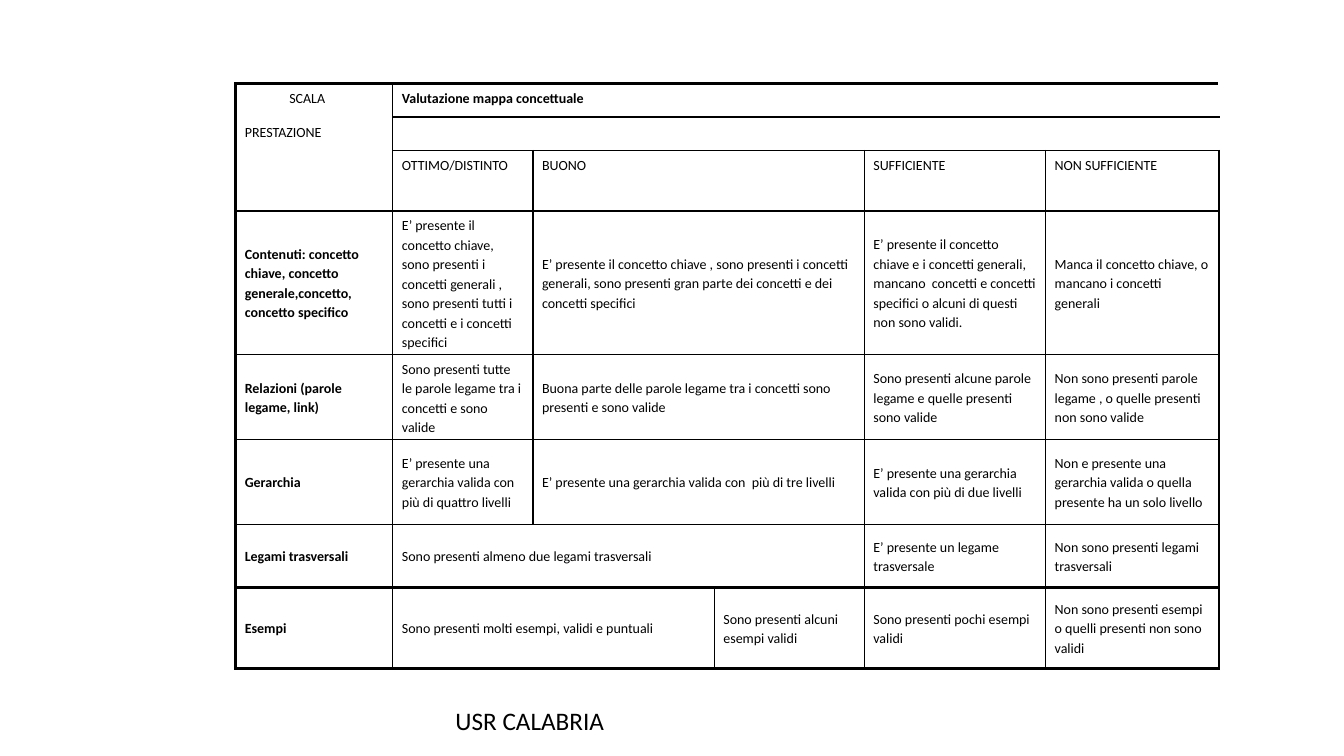
import dataclasses

import lxml.etree
import pptx
import pptx.dml.color
import pptx.enum.text
import pptx.oxml.ns
import pptx.util

Cm = pptx.util.Cm
Pt = pptx.util.Pt
ANCHOR = pptx.enum.text.MSO_ANCHOR


@dataclasses.dataclass(frozen=True)
class Theme:
    """Colours, type sizes and line widths of the slide."""
    font: str = "Calibri"
    ink: str = "000000"
    table_size: int = 10
    footer_size: int = 18
    thin: float = 1
    thick: float = 2.25


THEME = Theme()
COLUMN_WIDTHS = [3.96, 3.53, 4.57, 3.78, 4.57, 4.37]
ROW_HEIGHTS = [0.84, 0.84, 1.07, 3.58, 2.13, 2.13, 1.6, 2.03]
HEADER_ROWS = 3
LABEL_ROW = 2
EXAMPLES_ROW = 7

RUBRIC = [
    [("SCALA\nPRESTAZIONE", 3, 1), ("Valutazione mappa concettuale", 1, 5)],
    [None, ("", 1, 5)],
    [None, ("OTTIMO/DISTINTO", 1, 1), ("BUONO", 1, 2), ("SUFFICIENTE", 1, 1),
     ("NON SUFFICIENTE", 1, 1)],
    [("Contenuti: concetto chiave, concetto generale,concetto, concetto specifico", 1, 1),
     ("E’ presente il concetto chiave, sono presenti i concetti generali , "
      "sono presenti tutti i concetti e i concetti specifici", 1, 1),
     ("E’ presente il concetto chiave , sono presenti i concetti generali, "
      "sono presenti gran parte dei concetti e dei concetti specifici", 1, 2),
     ("E’ presente il concetto chiave e i concetti generali, mancano  concetti "
      "e concetti specifici o alcuni di questi non sono validi.", 1, 1),
     ("Manca il concetto chiave, o mancano i concetti generali", 1, 1)],
    [("Relazioni (parole legame, link)", 1, 1),
     ("Sono presenti tutte le parole legame tra i concetti e sono valide", 1, 1),
     ("Buona parte delle parole legame tra i concetti sono presenti e sono valide", 1, 2),
     ("Sono presenti alcune parole legame e quelle presenti sono valide", 1, 1),
     ("Non sono presenti parole legame , o quelle presenti non sono valide", 1, 1)],
    [("Gerarchia", 1, 1),
     ("E’ presente una gerarchia valida con più di quattro livelli", 1, 1),
     ("E’ presente una gerarchia valida con  più di tre livelli", 1, 2),
     ("E’ presente una gerarchia valida con più di due livelli", 1, 1),
     ("Non e presente una gerarchia valida o quella presente ha un solo livello", 1, 1)],
    [("Legami trasversali", 1, 1),
     ("Sono presenti almeno due legami trasversali", 1, 3),
     ("E’ presente un legame trasversale", 1, 1),
     ("Non sono presenti legami trasversali", 1, 1)],
    [("Esempi", 1, 1),
     ("Sono presenti molti esempi, validi e puntuali", 1, 2),
     ("Sono presenti alcuni esempi validi", 1, 1),
     ("Sono presenti pochi esempi validi", 1, 1),
     ("Non sono presenti esempi o quelli presenti non sono validi", 1, 1)],
]


def format_span(span, size, bold=False):
    """Apply the theme font to one run."""
    span.font.name = THEME.font
    span.font.size = Pt(size)
    span.font.bold = bold
    span.font.color.rgb = pptx.dml.color.RGBColor.from_string(THEME.ink)


def draw_edge(cell, side, width):
    """Draw one border of a cell."""
    properties = cell._tc.get_or_add_tcPr()
    line = lxml.etree.SubElement(
        properties, pptx.oxml.ns.qn("a:ln" + side), w=str(Pt(width)))
    fill = lxml.etree.SubElement(line, pptx.oxml.ns.qn("a:solidFill"))
    lxml.etree.SubElement(fill, pptx.oxml.ns.qn("a:srgbClr"), val=THEME.ink)


def frame_block(table, top, left, height, width):
    """Border the outside of a block of cells, heavier on the table's outline."""
    bottom, right = top + height, left + width
    heavy_rows = {0, EXAMPLES_ROW, len(ROW_HEIGHTS)}
    heavy_columns = {0, len(COLUMN_WIDTHS)} if top != LABEL_ROW else {0}
    for row in range(top, bottom):
        for column in range(left, right):
            cell = table.cell(row, column)
            edges = [("L", column, left, heavy_columns), ("R", column + 1, right, heavy_columns),
                     ("T", row, top, heavy_rows), ("B", row + 1, bottom, heavy_rows)]
            for side, position, limit, heavy in edges:
                if position == limit:
                    draw_edge(cell, side, THEME.thick if position in heavy else THEME.thin)
            cell.fill.background()


def write_cell(cell, text, bold, anchor):
    """Write and format the text of one cell."""
    cell.text_frame.text = text
    cell.vertical_anchor = anchor
    cell.margin_left = cell.margin_right = Cm(0.23)
    cell.margin_top = cell.margin_bottom = Cm(0.1)
    for para in cell.text_frame.paragraphs:
        para.line_spacing = 1.15
        para.space_after = Pt(10)
        for span in para.runs:
            format_span(span, THEME.table_size, bold)
        if not para.runs:
            lxml.etree.SubElement(para._p, pptx.oxml.ns.qn("a:endParaRPr"),
                                  sz=str(THEME.table_size * 100))


def add_rubric(page, left, top):
    """Build the evaluation table with its top left corner at the given point."""
    table = page.shapes.add_table(
        len(ROW_HEIGHTS), len(COLUMN_WIDTHS), Cm(left), Cm(top),
        Cm(sum(COLUMN_WIDTHS)), Cm(sum(ROW_HEIGHTS))).table
    table.first_row = table.horz_banding = False
    for column, width in zip(table.columns, COLUMN_WIDTHS):
        column.width = Cm(width)
    for row, height in zip(table.rows, ROW_HEIGHTS):
        row.height = Cm(height)
    for row, entries in enumerate(RUBRIC):
        column = 0
        for entry in entries:
            text, height, width = entry or ("", 1, 1)
            if entry:
                cell = table.cell(row, column)
                if height * width > 1:
                    cell.merge(table.cell(row + height - 1, column + width - 1))
                header = row < HEADER_ROWS
                bold = (column == 0) != header and (not header or row == 0)
                write_cell(cell, text, bold, ANCHOR.TOP if header else ANCHOR.MIDDLE)
                frame_block(table, row, column, height, width)
            column += width
    scale = table.cell(0, 0).text_frame.paragraphs[0]
    scale._p.get_or_add_pPr().set("marL", str(Cm(1.12)))


def add_footer(page, left, top, width, height):
    """Place the issuing office below the table."""
    box = page.shapes.add_textbox(Cm(left), Cm(top), Cm(width), Cm(height))
    frame = box.text_frame
    frame.word_wrap = True
    frame.vertical_anchor = ANCHOR.MIDDLE
    frame.margin_left = frame.margin_right = Cm(0.25)
    frame.margin_top = frame.margin_bottom = Cm(0.25)
    frame.text = "USR CALABRIA"
    format_span(frame.paragraphs[0].runs[0], THEME.footer_size)


def main():
    """Build and save the deck."""
    deck = pptx.Presentation()
    deck.slide_width, deck.slide_height = Cm(33.87), Cm(19.05)
    page = deck.slides.add_slide(deck.slide_layouts[6])
    add_footer(page, 11.23, 17.65, 11.43, 1.02)
    add_rubric(page, 5.94, 2.11)
    deck.save("out.pptx")


if __name__ == "__main__":
    main()
